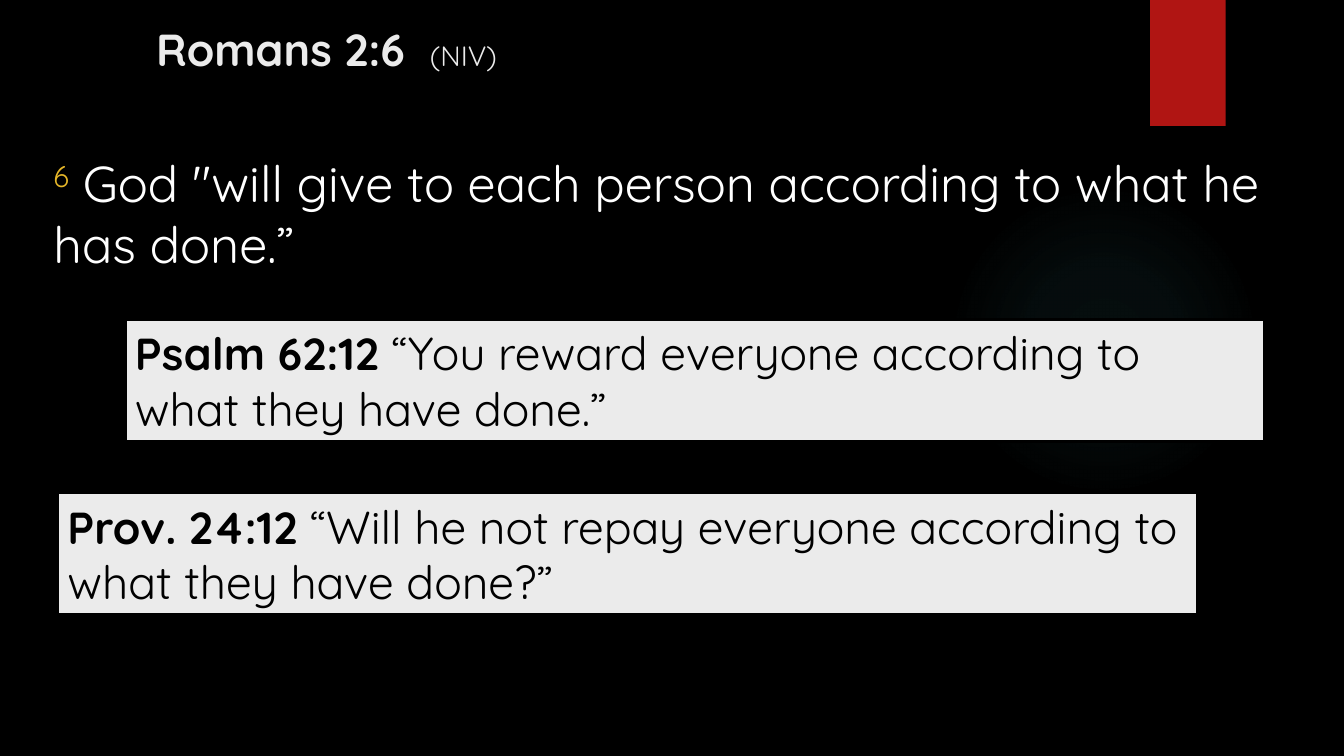
from lxml import etree
from pptx import Presentation
from pptx.dml.color import RGBColor
from pptx.enum.shapes import MSO_SHAPE
from pptx.enum.text import MSO_ANCHOR, MSO_AUTO_SIZE, PP_ALIGN
from pptx.oxml import parse_xml
from pptx.oxml.ns import nsdecls, qn
from pptx.util import Pt

RECT, OVAL = MSO_SHAPE.RECTANGLE, MSO_SHAPE.OVAL
TOP, LEFT, NO_FIT = MSO_ANCHOR.TOP, PP_ALIGN.LEFT, MSO_AUTO_SIZE.NONE

FONT = "Quicksand"
COLORS = {"black": "000000", "white": "FFFFFF", "pale": "EBEBEB",
          "gold": "E6B729", "red": "B01513", "teal": "50B9C1"}

TITLE = [("Romans 2:6\t", {"size": 32, "bold": True, "color": "pale"}),
         ("(NIV)", {"size": 20, "bold": False, "color": "pale"})]
VERSE = [("6", {"size": 36, "color": "gold", "raise": 30}),
         ("\u00a0God \"will give to each person according to what he has done.”",
          {"size": 36, "color": "white"})]
QUOTES = [("Psalm 62:12 ", "“You reward everyone according to what they have done.”", 89.3, 228.2),
          ("Prov. 24:12 ", "“Will he not repay\u00a0everyone according to what they have done?”", 41, 352.1)]
QUOTE_SIZE = (814.3, 87.1)
TITLE_BOX = (104.4, 12.2, 429.8, 51.8)
VERSE_BOX = (31, 105.1, 889.9, 458.6)
GLOW_BOX = (677.5, 131.8, 221.8, 221.8)
RIBBON_BOX = (821.5, 0, 54, 90)
NIV_TAB = 195.5
GLOW_STOPS = [(0, 7), (36, 6), (69, 0)]


def rgb(name):
    return RGBColor.from_string(COLORS[name])


def place(sp, box):
    for name, value in zip(("left", "top", "width", "height"), box):
        setattr(sp, name, Pt(value))


def add_block(kind, box, fill=None):
    sp = s.shapes.add_shape(kind, *map(Pt, box))
    sp.shadow.inherit = False
    sp.line.fill.background()
    if fill:
        sp.fill.solid()
        sp.fill.fore_color.rgb = rgb(fill)
    return sp


def write(sp, runs):
    tf = sp.text_frame
    for name, value in {"word_wrap": True, "auto_size": NO_FIT, "vertical_anchor": TOP}.items():
        setattr(tf, name, value)
    p = tf.paragraphs[0]
    p.alignment = LEFT
    for text, style in runs:
        r = p.add_run()
        r.text = text
        font = {"name": FONT, "size": Pt(style["size"]), "bold": style.get("bold", False)}
        for name, value in font.items():
            setattr(r.font, name, value)
        r.font.color.rgb = rgb(style["color"])
        if "raise" in style:
            r.font._element.set("baseline", str(style["raise"] * 1000))
    return p


def add_glow():
    sp = add_block(OVAL, GLOW_BOX)
    stops = "".join(
        f'<a:gs pos="{pos * 1000}"><a:srgbClr val="{COLORS["teal"]}">'
        f'<a:alpha val="{alpha * 1000}"/></a:srgbClr></a:gs>' for pos, alpha in GLOW_STOPS)
    grad = parse_xml(
        f'<a:gradFill {nsdecls("a")}><a:gsLst>{stops}</a:gsLst><a:path path="circle">'
        '<a:fillToRect l="50000" t="50000" r="50000" b="50000"/></a:path></a:gradFill>')
    sp.element.spPr.find(qn("a:prstGeom")).addnext(grad)
    return sp


prs = Presentation()
prs.slide_width, prs.slide_height = Pt(960), Pt(540)
s = prs.slides.add_slide(prs.slide_layouts[1])
s.background.fill.solid()
s.background.fill.fore_color.rgb = rgb("black")

title, verse = s.placeholders
for sp in (add_glow(), add_block(RECT, RIBBON_BOX, "red")):
    title.element.addprevious(sp.element)

place(title, TITLE_BOX)
pPr = write(title, TITLE)._p.get_or_add_pPr()
tabs = etree.SubElement(pPr, qn("a:tabLst"))
etree.SubElement(tabs, qn("a:tab"), pos=str(Pt(NIV_TAB)), algn="l")

place(verse, VERSE_BOX)
pPr = write(verse, VERSE)._p.get_or_add_pPr()
pPr.set("marL", "0")
pPr.set("indent", "0")
etree.SubElement(pPr, qn("a:buNone"))
verse.text_frame.paragraphs[0].space_before = Pt(0)

for source, quote, left, top in QUOTES:
    sp = add_block(RECT, (left, top, *QUOTE_SIZE), "pale")
    sp.line.color.rgb = rgb("black")
    sp.line.width = Pt(2.25)
    write(sp, [(source, {"size": 32, "bold": True, "color": "black"}),
               (quote, {"size": 33, "color": "black"})])

prs.save("out.pptx")
